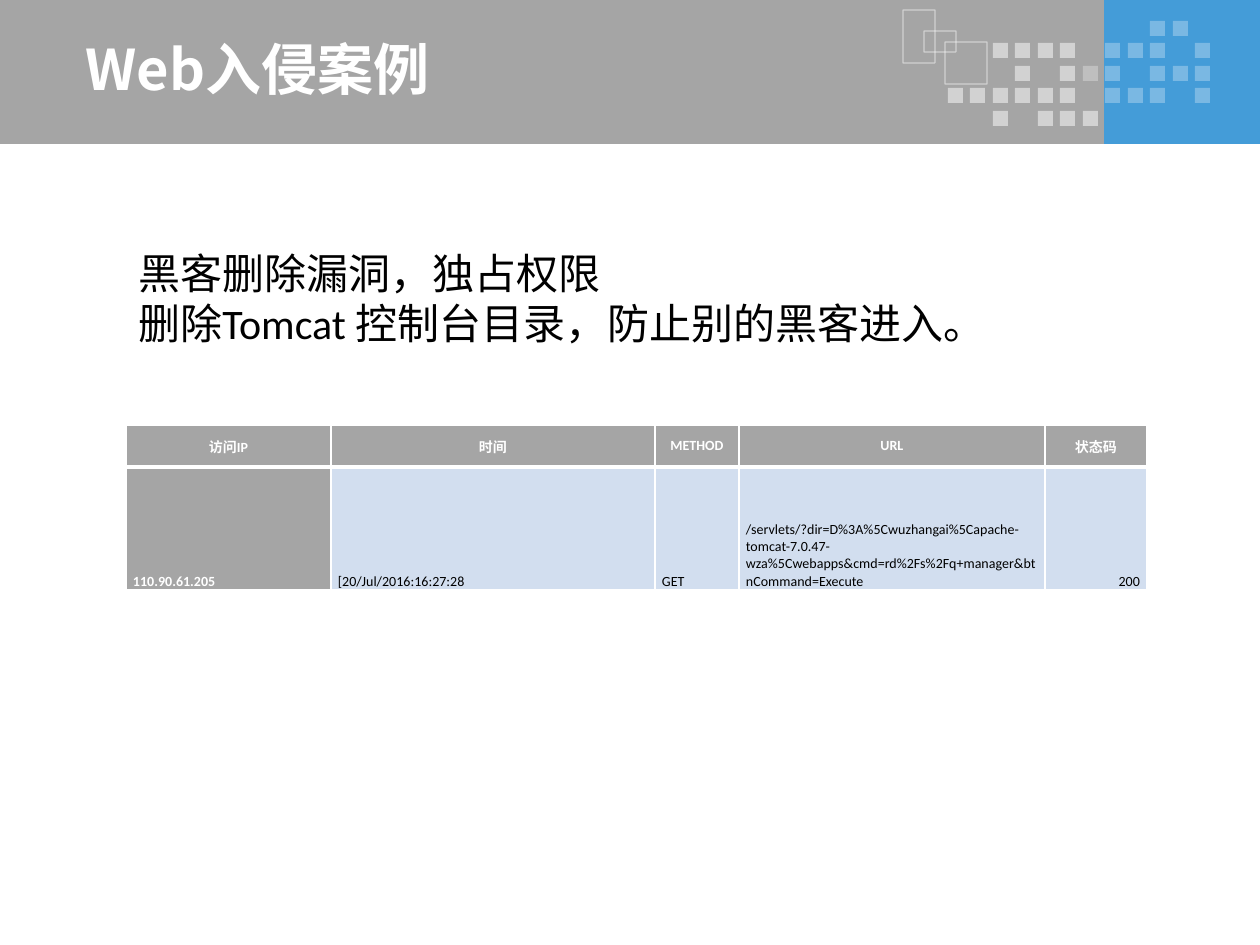
from dataclasses import dataclass

from lxml import etree
from pptx import Presentation
from pptx import util as u
from pptx.dml.color import RGBColor
from pptx.enum import shapes, text
from pptx.oxml.ns import qn

PX = 914400 // 126


@dataclass(frozen=True)
class Theme:
    white: str = "FFFFFF"
    black: str = "000000"
    gray: str = "A5A5A5"
    blue: str = "449CD8"
    pale_blue: str = "D2DEEF"
    latin: str = "Calibri"
    chinese: str = "Noto Sans CJK SC"
    title_size: int = 32
    body_size: int = 24
    table_size: int = 8


THEME = Theme()

# Header mosaic: "#" is a strong square, "+" a faint one.
MOSAIC = (
    ".........++.",
    "..####.+++.+",
    "...#.#++.+++",
    "######.+++.+",
    "..#.###.....",
)
MOSAIC_OPACITY = {"#": 50, "+": 29}
OUTLINES = ((903, 10, 32, 53), (924, 31, 32, 21), (945, 42, 42, 42))

BODY = ("黑客删除漏洞，独占权限", "删除Tomcat 控制台目录，防止别的黑客进入。")
HEADERS = ("访问IP", "时间", "METHOD", "URL", "状态码")
REQUEST = (
    "110.90.61.205",
    "[20/Jul/2016:16:27:28",
    "GET",
    "/servlets/?dir=D%3A%5Cwuzhangai%5Capache-tomcat-7.0.47-wza%5Cwebapps"
    "&cmd=rd%2Fs%2Fq+manager&btnCommand=Execute",
    "200",
)
COLUMN_WIDTHS = (205, 324, 84, 306, 102)
ROW_HEIGHTS = (42, 123)


def px(*lengths):
    return [length * PX for length in lengths]


def rgb(color):
    return RGBColor.from_string(color)


def set_opacity(fill_parent, percent):
    color = fill_parent.find(qn("a:solidFill"))[0]
    etree.SubElement(color, qn("a:alpha"), val=str(percent * 1000))


def add_rectangle(slide, box, fill=None, line=None, opacity=100):
    shape = slide.shapes.add_shape(shapes.MSO_SHAPE.RECTANGLE, *px(*box))
    shape.shadow.inherit = False
    properties = shape._element.spPr
    if fill:
        shape.fill.solid()
        shape.fill.fore_color.rgb = rgb(fill)
        if opacity < 100:
            set_opacity(properties, opacity)
    else:
        shape.fill.background()
    if line:
        shape.line.color.rgb = rgb(line)
        shape.line.width = u.Pt(0.75)
        set_opacity(properties.find(qn("a:ln")), opacity)
    else:
        shape.line.fill.background()


def format_text(text_frame, size, color, bold=False, latin=THEME.latin,
                alignment=text.PP_ALIGN.LEFT):
    for paragraph in text_frame.paragraphs:
        paragraph.alignment = alignment
        for run in paragraph.runs:
            font = run.font
            font.name, font.size, font.bold = latin, u.Pt(size), bold
            font.color.rgb = rgb(color)
            etree.SubElement(run._r.get_or_add_rPr(), qn("a:ea"),
                             typeface=THEME.chinese)


def add_header(slide):
    add_rectangle(slide, (1104, 0, 156, 144), fill=THEME.blue)
    add_rectangle(slide, (0, 0, 1104, 144), fill=THEME.gray)
    for row, marks in enumerate(MOSAIC):
        for column, mark in enumerate(marks):
            if mark in MOSAIC_OPACITY:
                box = (948 + column * 45 // 2, 21 + row * 45 // 2, 15, 15)
                add_rectangle(slide, box, fill=THEME.white,
                              opacity=MOSAIC_OPACITY[mark])
    for box in OUTLINES:
        add_rectangle(slide, box, line=THEME.white, opacity=50)


def place_title(slide, wording):
    title = slide.shapes.title
    title.left, title.top, title.width, title.height = px(73, 35, 978, 67)
    frame = title.text_frame
    frame.text = wording
    frame.auto_size = text.MSO_AUTO_SIZE.NONE
    frame.vertical_anchor = text.MSO_ANCHOR.MIDDLE
    format_text(frame, THEME.title_size, THEME.white, True, THEME.chinese)
    # Bring the title in front of the header shapes.
    slide.shapes._spTree.append(title._element)


def add_body(slide):
    frame = slide.shapes.add_textbox(*px(126, 241, 910, 115)).text_frame
    frame.word_wrap = True
    frame.auto_size = text.MSO_AUTO_SIZE.SHAPE_TO_FIT_TEXT
    frame.text = "\n".join(BODY)
    format_text(frame, THEME.body_size, THEME.black)


def add_borders(cell, **widths):
    properties = cell._tc.get_or_add_tcPr()
    for side in "LRTB":
        line = etree.SubElement(properties, qn(f"a:ln{side}"),
                                w=str(u.Pt(widths.get(side, 1))))
        fill = etree.SubElement(line, qn("a:solidFill"))
        etree.SubElement(fill, qn("a:srgbClr"), val=THEME.white)


def fill_cell(cell, wording, is_header, is_key, alignment):
    add_borders(cell, **({"B": 3} if is_header else {"T": 3}))
    cell.fill.solid()
    cell.fill.fore_color.rgb = rgb(THEME.gray if is_key else THEME.pale_blue)
    cell.margin_left, cell.margin_right = px(7, 7)
    cell.margin_top = cell.margin_bottom = 0
    cell.vertical_anchor = (text.MSO_ANCHOR.MIDDLE if is_header
                            else text.MSO_ANCHOR.BOTTOM)
    cell.text_frame.text = wording
    format_text(cell.text_frame, THEME.table_size,
                THEME.white if is_key else THEME.black, is_key,
                alignment=alignment)


def add_request_table(slide):
    box = px(126, 425, sum(COLUMN_WIDTHS), sum(ROW_HEIGHTS))
    table = slide.shapes.add_table(2, len(HEADERS), *box).table
    table.first_row = table.horz_banding = False
    for column, width in zip(table.columns, px(*COLUMN_WIDTHS)):
        column.width = width
    for row, height in zip(table.rows, px(*ROW_HEIGHTS)):
        row.height = height
    align = text.PP_ALIGN
    last = len(HEADERS) - 1
    for index, (header, value) in enumerate(zip(HEADERS, REQUEST)):
        fill_cell(table.cell(0, index), header, True, True, align.CENTER)
        fill_cell(table.cell(1, index), value, False, index == 0,
                  align.RIGHT if index == last else align.LEFT)


def main():
    presentation = Presentation()
    presentation.slide_width, presentation.slide_height = px(1260, 945)
    slide = presentation.slides.add_slide(presentation.slide_layouts[5])
    add_header(slide)
    place_title(slide, "Web入侵案例")
    add_body(slide)
    add_request_table(slide)
    presentation.save("out.pptx")


if __name__ == "__main__":
    main()
